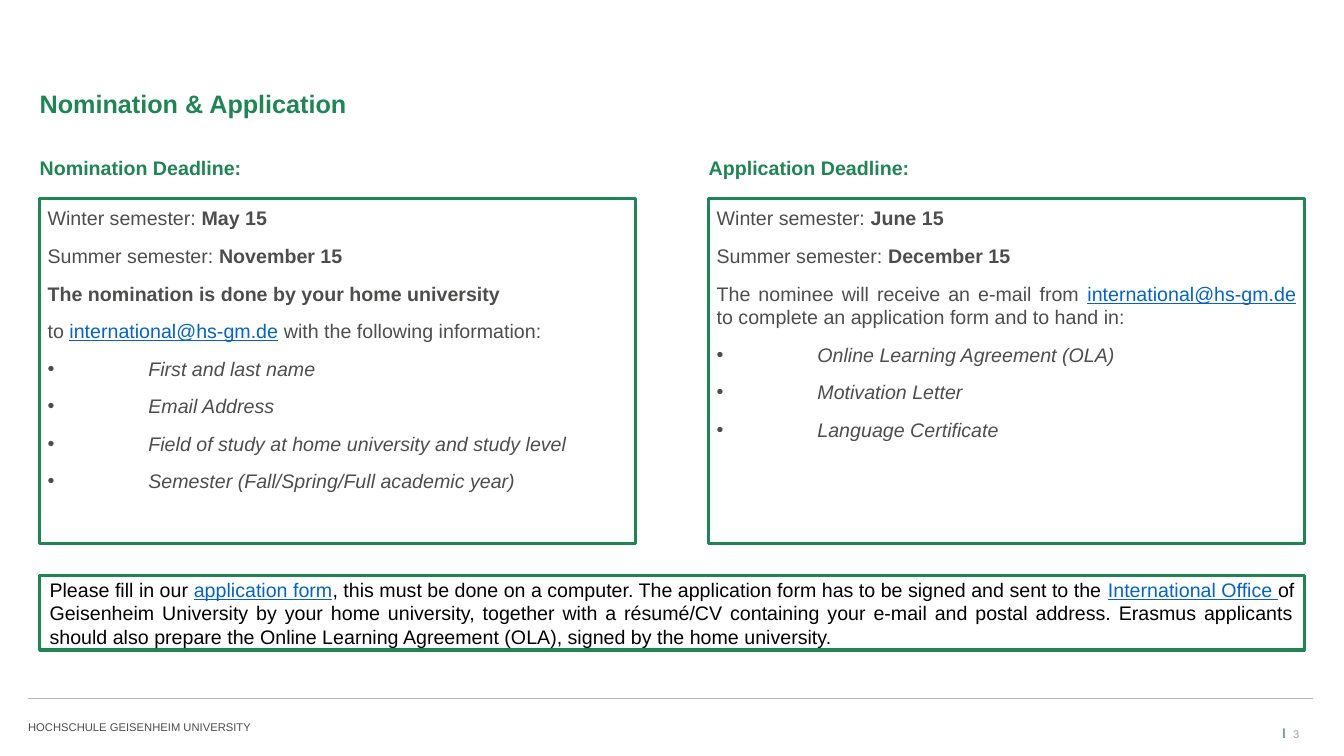
from dataclasses import dataclass, field

from lxml import etree
from pptx import Presentation
from pptx import util as u
from pptx.dml.color import RGBColor
from pptx.enum import shapes, text
from pptx.oxml.ns import qn
from pptx.shapes.autoshape import Shape
from pptx.slide import Slide

COLORS = {"green": "218455", "gray": "4D4D4C", "link": "0563C1", "black": "000000",
          "white": "FFFFFF", "rule": "B4B5B4", "number": "9E9F9E"}
FONT = "Arial"
EMAIL = "international@hs-gm.de"
MARGIN, COLUMN_STEP, COLUMN_WIDTH = 1.0, 16.86, 15.01
ALIGN, ANCHOR = text.PP_ALIGN, text.MSO_ANCHOR


@dataclass
class Piece:
    words: str
    bold: bool = False
    link: bool = False


@dataclass
class Line:
    pieces: list[Piece]
    size: float = 14
    color: str = "gray"
    bold: bool = False
    bullet: bool = False
    align: ALIGN = ALIGN.LEFT
    spacing: float = 1.0


@dataclass
class Column:
    heading: str
    lines: list[list[Piece]]
    items: list[str]
    align: ALIGN


@dataclass
class Label:
    words: str
    box: tuple[float, float, float, float]
    size: float
    color: str
    align: ALIGN = field(default=ALIGN.LEFT)


COLUMNS = [
    Column("Nomination Deadline:", [
        [Piece("Winter semester: "), Piece("May 15", bold=True)],
        [Piece("Summer semester: "), Piece("November 15", bold=True)],
        [Piece("The nomination is done by your home university", bold=True)],
        [Piece("to "), Piece(EMAIL, link=True), Piece(" with the following information:")],
    ], ["First and last name", "Email Address",
        "Field of study at home university and study level",
        "Semester (Fall/Spring/Full academic year)"], ALIGN.LEFT),
    Column("Application Deadline:", [
        [Piece("Winter semester: "), Piece("June 15", bold=True)],
        [Piece("Summer semester: "), Piece("December 15", bold=True)],
        [Piece("The nominee will receive an e-mail from "), Piece(EMAIL, link=True),
         Piece(" to complete an application form and to hand in:")],
    ], ["Online Learning Agreement (OLA)", "Motivation Letter",
        "Language Certificate"], ALIGN.JUSTIFY),
]
NOTICE = [
    Piece("Please fill in our "), Piece("application form", link=True),
    Piece(", this must be done on a computer. The application form has to be signed "
          "and sent to the "),
    Piece("International Office ", link=True),
    Piece("of Geisenheim University by your home university, together with a résumé/CV "
          "containing your e-mail and postal address. Erasmus applicants should also "
          "prepare the Online Learning Agreement (OLA), signed by the home university."),
]
LABELS = [
    Label("HOCHSCHULE GEISENHEIM UNIVERSITY", (0.71, 18.16, 7.01, 0.33), 8, "gray"),
    Label("I", (32.21, 18.26, 0.3, 0.43), 10, "green", ALIGN.CENTER),
    Label("3", (32.59, 18.16, 0.99, 0.51), 8, "number"),
]


def rgb(name: str) -> RGBColor:
    return RGBColor.from_string(COLORS[name])


def place(shape: Shape, left: float, top: float, width: float, height: float) -> None:
    shape.left, shape.top = u.Cm(left), u.Cm(top)
    shape.width, shape.height = u.Cm(width), u.Cm(height)


def outline(shape: Shape) -> None:
    shape.line.color.rgb = rgb("green")
    shape.line.width = u.Pt(2.25)


def set_bullet(paragraph, bullet: bool) -> None:
    properties = paragraph._p.get_or_add_pPr()
    indent = u.Cm(2.54) if bullet else 0
    properties.set("marL", str(indent))
    properties.set("indent", str(-indent))
    mark = etree.SubElement(properties, qn("a:buChar" if bullet else "a:buNone"))
    if bullet:
        mark.set("char", "•")


def write(shape: Shape, lines: list[Line], anchor: ANCHOR,
          inset_x: float = 0, inset_y: float = 0) -> None:
    frame = shape.text_frame
    frame.word_wrap = True
    frame.auto_size = text.MSO_AUTO_SIZE.NONE
    frame.vertical_anchor = anchor
    frame.margin_left = frame.margin_right = u.Cm(inset_x)
    frame.margin_top = frame.margin_bottom = u.Cm(inset_y)
    for number, line in enumerate(lines):
        paragraph = frame.add_paragraph() if number else frame.paragraphs[0]
        set_bullet(paragraph, line.bullet)
        paragraph.alignment = line.align
        paragraph.line_spacing = line.spacing
        paragraph.space_before = u.Pt(10 if number else 0)
        font = paragraph.font
        font.name, font.size = FONT, u.Pt(line.size)
        font.bold, font.italic = line.bold, line.bullet
        font.color.rgb = rgb(line.color)
        for piece in line.pieces:
            run = paragraph.add_run()
            run.text = piece.words
            if piece.bold:
                run.font.bold = True
            if piece.link:
                run.font.underline = True
                run.font.color.rgb = rgb("link")


def add_column(slide: Slide, index: int, column: Column) -> None:
    left = MARGIN + index * COLUMN_STEP
    heading, content = (slide.placeholders[1 + 2 * index + part] for part in range(2))
    place(heading, left, 4, COLUMN_WIDTH, 0.51)
    write(heading, [Line([Piece(column.heading)], color="green", bold=True, spacing=0.9)],
          ANCHOR.TOP)
    place(content, left, 5, COLUMN_WIDTH, 8.69)
    outline(content)
    lines = [Line(pieces, align=column.align) for pieces in column.lines]
    lines += [Line([Piece(item)], bullet=True, align=column.align) for item in column.items]
    write(content, lines, ANCHOR.TOP, 0.2, 0.2)


def add_label(slide: Slide, label: Label) -> None:
    box = slide.shapes.add_textbox(*(u.Cm(length) for length in label.box))
    write(box, [Line([Piece(label.words)], label.size, label.color, align=label.align)],
          ANCHOR.BOTTOM)


def main() -> None:
    presentation = Presentation()
    presentation.slide_width, presentation.slide_height = u.Cm(33.87), u.Cm(19.05)
    slide = presentation.slides.add_slide(
        presentation.slide_layouts.get_by_name("Comparison"))

    # Title and the two deadline columns
    title = slide.shapes.title
    place(title, MARGIN, 1, COLUMN_WIDTH, 2)
    write(title, [Line([Piece("Nomination & Application")], 18, "green", bold=True,
                       spacing=0.9)], ANCHOR.BOTTOM)
    for index, column in enumerate(COLUMNS):
        add_column(slide, index, column)

    # Notice across both columns
    notice = slide.shapes.add_shape(shapes.MSO_SHAPE.RECTANGLE, 0, 0, 0, 0)
    place(notice, MARGIN, 14.5, COLUMN_STEP + COLUMN_WIDTH, 1.88)
    notice.shadow.inherit = False
    notice.fill.solid()
    notice.fill.fore_color.rgb = rgb("white")
    outline(notice)
    write(notice, [Line(NOTICE, color="black", align=ALIGN.JUSTIFY)],
          ANCHOR.MIDDLE, 0.25, 0.13)

    # Footer
    rule = slide.shapes.add_connector(shapes.MSO_CONNECTOR.STRAIGHT, u.Cm(0.71),
                                      u.Cm(17.6), u.Cm(33.1), u.Cm(17.6))
    rule.line.color.rgb = rgb("rule")
    rule.line.width = u.Pt(0.75)
    etree.SubElement(rule._element.spPr, qn("a:effectLst"))
    for label in LABELS:
        add_label(slide, label)

    presentation.save("out.pptx")


if __name__ == "__main__":
    main()
